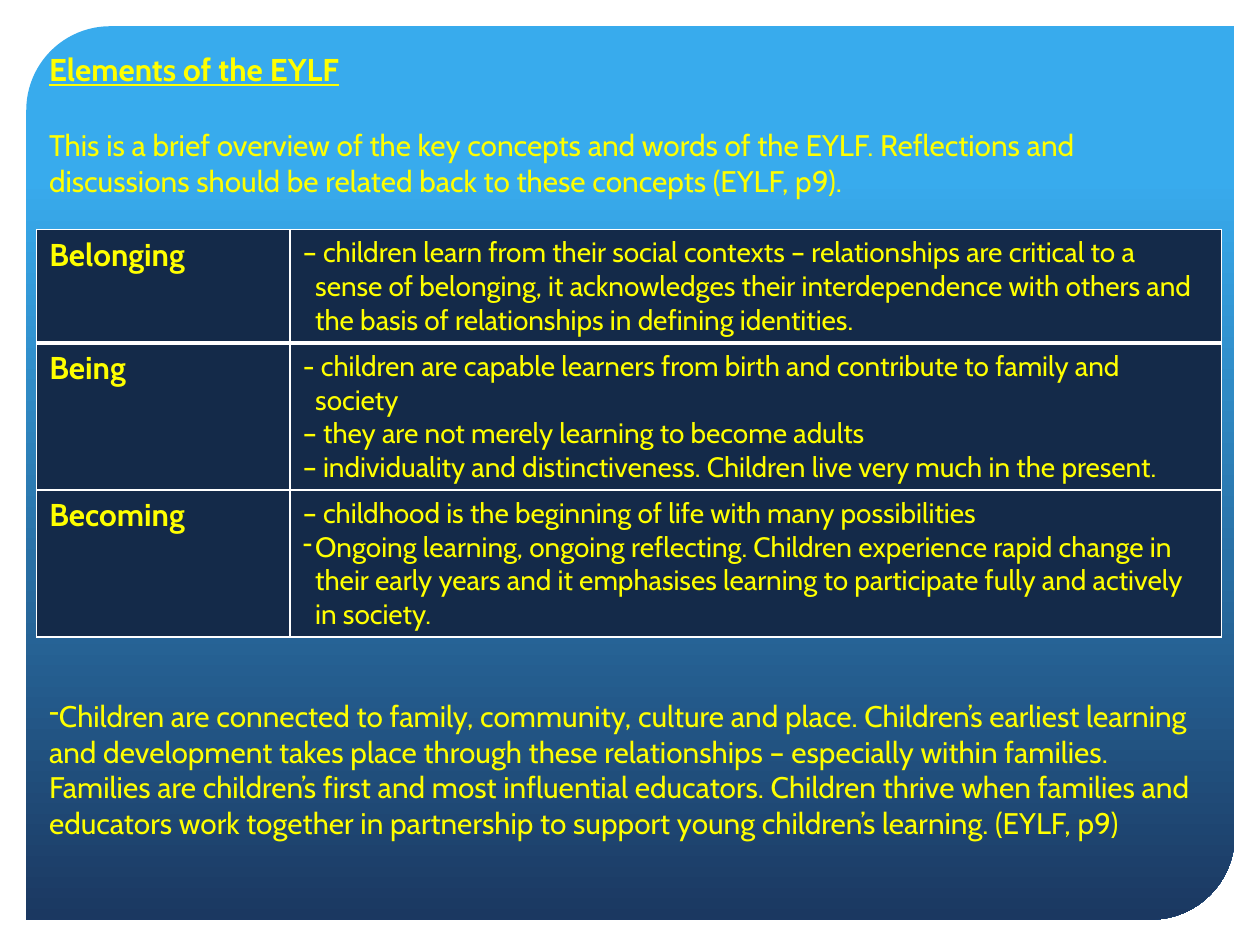
from lxml import etree
from pptx import Presentation, util as u
from pptx.dml.color import RGBColor
from pptx.enum import shapes, text
from pptx.oxml import ns


def colour(code):
    return RGBColor.from_string(code)


class Deck:
    """Holds the style and the current slide, and draws each kind of element."""

    font, ink, navy, rule = "Cabin", "FFFF00", "142A49", "FFFFFF"

    def __init__(self, width, height):
        self.show = Presentation()
        self.show.slide_width, self.show.slide_height = u.Cm(width), u.Cm(height)
        self.slide = self.show.slides.add_slide(self.show.slide_layouts[6])

    def backdrop(self, left, top, width, height, stops):
        panel = self.slide.shapes.add_shape(
            shapes.MSO_SHAPE.ROUND_2_DIAG_RECTANGLE, *map(u.Cm, (left, top, width, height)))
        panel.shadow.inherit = False
        panel.adjustments[0], panel.adjustments[1] = 0.094, 0
        panel.line.fill.background()
        panel.fill.gradient()
        panel.fill.gradient_angle = 270
        for stop, (position, code) in zip(panel.fill.gradient_stops, stops):
            stop.position = position
            stop.color.rgb = colour(code)

    def set_line(self, paragraph, words, size, bold=False, underline=False, hang=0, bullet=None):
        properties = paragraph._p.get_or_add_pPr()
        if hang:
            properties.set("marL", str(u.Cm(hang)))
            properties.set("indent", str(-u.Cm(hang)))
        if bullet:
            etree.SubElement(properties, ns.qn("a:buChar")).set("char", bullet)
        paragraph.text = words
        for run in paragraph.runs:
            run.font.name, run.font.size = self.font, u.Pt(size)
            run.font.bold, run.font.underline = bold, underline
            run.font.color.rgb = colour(self.ink)

    def fill_frame(self, frame, lines):
        for number, (words, style) in enumerate(lines):
            paragraph = frame.add_paragraph() if number else frame.paragraphs[0]
            self.set_line(paragraph, words, **style)

    def textbox(self, left, top, width, height, lines):
        frame = self.slide.shapes.add_textbox(*map(u.Cm, (left, top, width, height))).text_frame
        frame.word_wrap = True
        frame.vertical_anchor = text.MSO_ANCHOR.TOP
        self.fill_frame(frame, lines)
        return frame

    def border(self, cell, side, points):
        line = etree.SubElement(cell._tc.get_or_add_tcPr(), ns.qn(f"a:ln{side}"), w=str(u.Pt(points)))
        solid = etree.SubElement(line, ns.qn("a:solidFill"))
        etree.SubElement(solid, ns.qn("a:srgbClr"), val=self.rule)

    def table(self, left, top, widths, heights, rows):
        grid = self.slide.shapes.add_table(
            len(heights), len(widths),
            *map(u.Cm, (left, top, sum(widths), sum(heights)))).table
        for column, width in zip(grid.columns, widths):
            column.width = u.Cm(width)
        for number, (row, height, entries) in enumerate(zip(grid.rows, heights, rows)):
            row.height = u.Cm(height)
            edges = {"L": 1, "R": 1, "T": 3 if number == 1 else 1, "B": 1 if number else 3}
            for cell, lines in zip(row.cells, entries):
                for side, points in edges.items():
                    self.border(cell, side, points)
                cell.fill.solid()
                cell.fill.fore_color.rgb = colour(self.navy)
                self.fill_frame(cell.text_frame, lines)


def main():
    deck = Deck(25.4, 19.05)
    deck.backdrop(0.53, 0.53, 24.36, 18.01, [(0.17, "38ABED"), (1, "1B3861")])

    heading = dict(size=18, bold=True)
    body = dict(size=17)
    point = dict(size=16, hang=0.25)
    left, width = 0.74, 23.88

    overview = deck.textbox(left, 0.89, width, 3.4, [
        ("Elements of the EYLF", dict(heading, underline=True)),
        ("This is a brief overview of the key concepts and words of the EYLF. Reflections and "
         "discussions should be related back to these concepts (EYLF, p9).", body),
    ])
    overview.paragraphs[1].space_before = u.Pt(22)

    concepts = [
        ("Belonging", [
            ("– children learn from their social contexts – relationships are critical to a sense "
             "of belonging, it acknowledges their interdependence with others and the basis of "
             "relationships in defining identities.", point)]),
        ("Being", [
            ("- children are capable learners from birth and contribute to family and society", point),
            ("– they are not merely learning to become adults", point),
            ("– individuality and distinctiveness. Children live very much in the present.", point)]),
        ("Becoming", [
            ("– childhood is the beginning of life with many possibilities", dict(size=16)),
            ("Ongoing learning, ongoing reflecting. Children experience rapid change in their early "
             "years and it emphasises learning to participate fully and actively in society.",
             dict(point, bullet="-"))]),
    ]
    deck.table(left, 4.63, [5.11, 18.77], [2.27, 2.96, 2.96],
               [([(name, heading)], meaning) for name, meaning in concepts])

    deck.textbox(left, 13.94, width, 3.2, [
        ("Children are connected to family, community, culture and place. Children’s earliest "
         "learning and development takes place through these relationships – especially within "
         "families. Families are children’s first and most influential educators. Children thrive "
         "when families and educators work together in partnership to support young children’s "
         "learning. (EYLF, p9)", dict(body, bullet="-")),
    ])
    deck.show.save("out.pptx")


if __name__ == "__main__":
    main()
